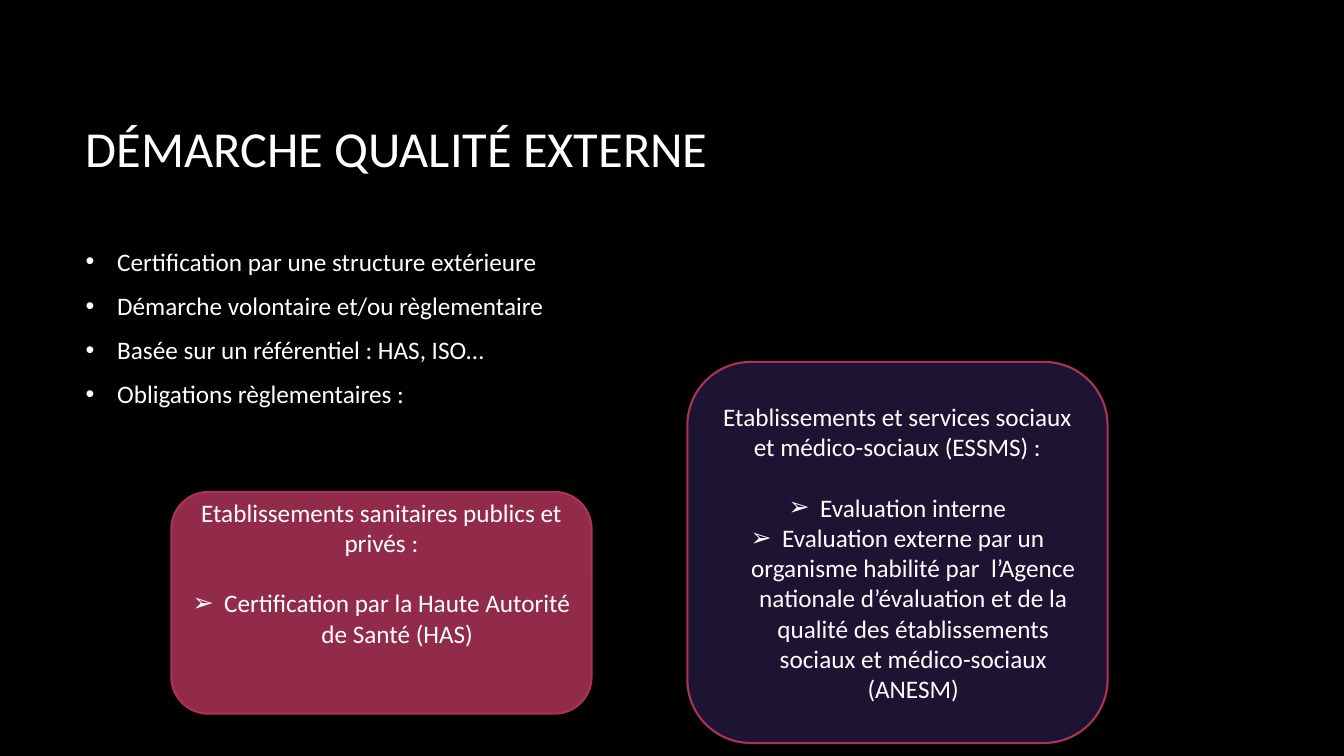
from pptx import Presentation
from pptx.dml.color import RGBColor
from pptx.enum.shapes import MSO_SHAPE
from pptx.enum.text import MSO_ANCHOR, MSO_AUTO_SIZE, PP_ALIGN
from pptx.oxml.ns import qn
from pptx.util import Pt
from lxml import etree

BLACK = RGBColor(0x00, 0x00, 0x00)
WHITE = RGBColor(0xFF, 0xFF, 0xFF)
PINK = RGBColor(0xE8, 0x45, 0x74)
NAVY = RGBColor(0x2F, 0x1F, 0x50)
ROSE = RGBColor(0xAC, 0x33, 0x56)

CARD = MSO_SHAPE.FLOWCHART_ALTERNATE_PROCESS
LEFT, CENTER = PP_ALIGN.LEFT, PP_ALIGN.CENTER
TOP, MIDDLE = MSO_ANCHOR.TOP, MSO_ANCHOR.MIDDLE
NO_FIT = MSO_AUTO_SIZE.NONE


class Deck:
    font = "Calibri"
    size = 18
    line = 21.6
    indent = 22.5

    def __init__(self, prs):
        self.slide = prs.slides.add_slide(prs.slide_layouts[1])
        fill = self.slide.background.fill
        fill.solid()
        fill.fore_color.rgb = BLACK

    def place(self, shape, left, top, width, height):
        shape.left, shape.top = Pt(left), Pt(top)
        shape.width, shape.height = Pt(width), Pt(height)

    def frame(self, shape, anchor):
        frame = shape.text_frame
        frame.word_wrap = True
        frame.auto_size = NO_FIT
        frame.vertical_anchor = anchor
        return frame

    def style(self, para, align, size=size, before=0, after=0):
        para.alignment = align
        para.space_before, para.space_after = Pt(before), Pt(after)
        para.font.name = self.font
        para.font.size = Pt(size)
        para.font.color.rgb = WHITE

    def bullet(self, para, char):
        """Give the paragraph a white bullet with a hanging indent."""
        props = para._p.get_or_add_pPr()
        props.set("marL", str(Pt(self.indent)))
        props.set("indent", str(-Pt(self.indent)))
        tint = etree.SubElement(props, qn("a:buClr"))
        etree.SubElement(tint, qn("a:srgbClr"), val=str(WHITE))
        etree.SubElement(props, qn("a:buFont"), typeface="Arial")
        etree.SubElement(props, qn("a:buChar"), char=char)

    def title(self, text, *box):
        shape = self.slide.shapes.title
        self.place(shape, *box)
        frame = self.frame(shape, MIDDLE)
        frame.text = text
        self.style(frame.paragraphs[0], LEFT, size=36)

    def body(self, items, *box):
        shape = self.slide.placeholders[1]
        self.place(shape, *box)
        frame = self.frame(shape, TOP)
        frame.margin_top = Pt(7.2)
        frame.text = "\n".join(items)
        for para in frame.paragraphs:
            self.bullet(para, "•")
            self.style(para, LEFT, after=10)

    def card(self, head, items, color, *box, spare=0):
        """Draw a card; spare is the number of lines kept free at its foot."""
        shape = self.slide.shapes.add_shape(CARD, *map(Pt, box))
        shape.shadow.inherit = False
        shape.fill.solid()
        shape.fill.fore_color.rgb = color
        tint = shape._element.spPr.find(".//" + qn("a:srgbClr"))
        etree.SubElement(tint, qn("a:alpha"), val="63000")
        shape.line.color.rgb = ROSE
        shape.line.width = Pt(1.5)
        frame = self.frame(shape, MIDDLE)
        frame.margin_bottom = Pt(3.6 + spare * self.line)
        frame.text = "\n".join([head, *items])
        for i, para in enumerate(frame.paragraphs):
            if i:
                self.bullet(para, "➢")
            self.style(para, CENTER, before=self.line if i == 1 else 0)


def main():
    prs = Presentation()
    prs.slide_width, prs.slide_height = Pt(960), Pt(540)
    deck = Deck(prs)
    deck.title("DÉMARCHE QUALITÉ EXTERNE", 54, 48.2, 798, 114.5)
    deck.body([
        "Certification par une structure extérieure",
        "Démarche volontaire et/ou règlementaire",
        "Basée sur un référentiel : HAS, ISO…",
        "Obligations règlementaires :",
    ], 54, 168.5, 798, 192)
    deck.card(
        "Etablissements sanitaires publics et privés :",
        ["Certification par la Haute Autorité de Santé (HAS)"],
        PINK, 122.4, 351.4, 300.2, 158.4, spare=2)
    deck.card(
        "Etablissements et services sociaux et médico-sociaux (ESSMS) :",
        ["Evaluation interne",
         "Evaluation externe par un organisme habilité par  l’Agence "
         "nationale d’évaluation et de la qualité des établissements "
         "sociaux et médico-sociaux (ANESM)"],
        NAVY, 491, 258.5, 300.2, 272.2)
    prs.save("out.pptx")


if __name__ == "__main__":
    main()
